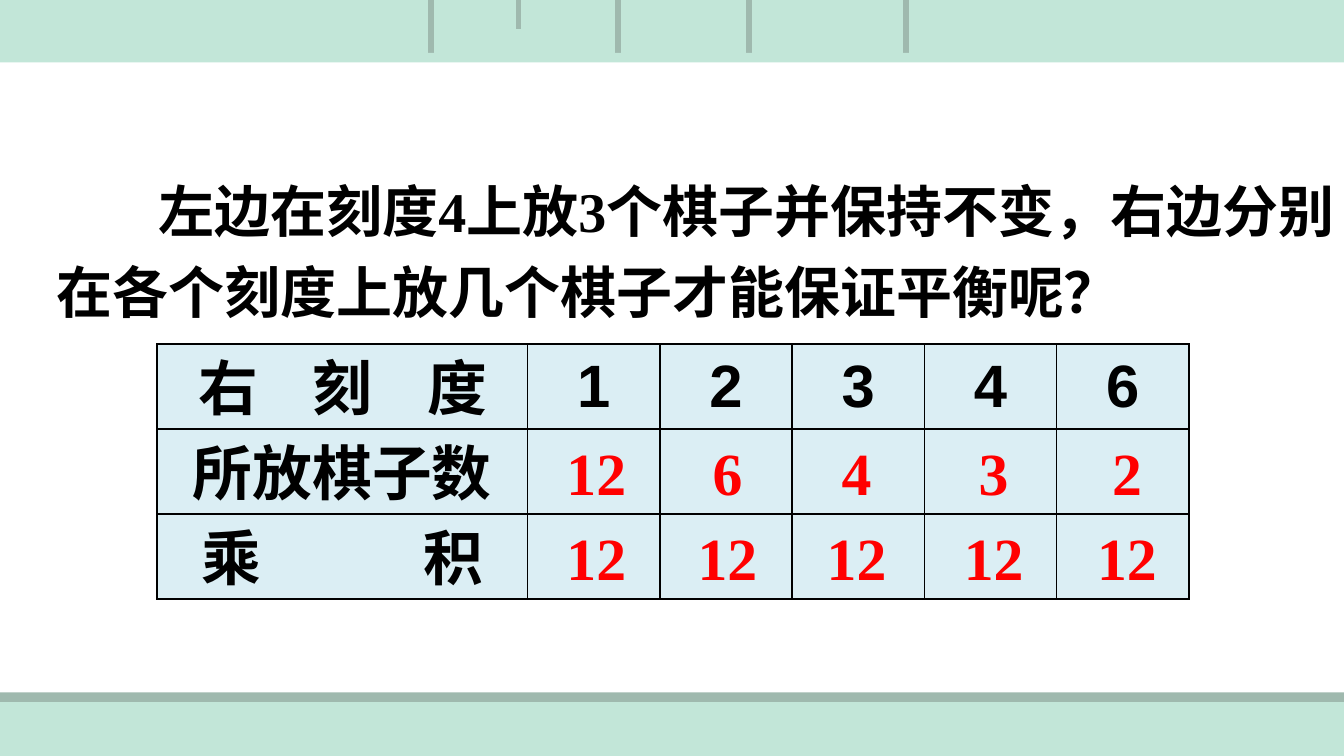
import lxml.etree
import pptx
import pptx.dml.color
import pptx.enum.shapes
import pptx.enum.text
import pptx.oxml.ns
import pptx.util

Cm = pptx.util.Cm
Pt = pptx.util.Pt
RGBColor = pptx.dml.color.RGBColor
PP_ALIGN = pptx.enum.text.PP_ALIGN
MSO_ANCHOR = pptx.enum.text.MSO_ANCHOR
qn = pptx.oxml.ns.qn

MINT = RGBColor(0xC2, 0xE6, 0xD8)
SAGE = RGBColor(0x9F, 0xB9, 0xAE)
WHITE = RGBColor(0xFF, 0xFF, 0xFF)
BLACK = RGBColor(0x00, 0x00, 0x00)
RED = RGBColor(0xFF, 0x00, 0x00)
PALE_BLUE = RGBColor(0xDB, 0xEE, 0xF4)

QUESTION_FORMAT = {"size": Pt(30), "name": "Times New Roman", "bold": True}
CELL_FORMAT = {"size": Pt(32), "name": "Arial", "bold": True}
ANSWER_FORMAT = {"size": Pt(32), "name": "Times New Roman", "bold": True}

ROW_LABELS = ["右\t刻\t度", "所放棋子数", "乘\t积"]
LABEL_TABS = {0: (0.78, [2.16, 4.32]), 2: (0.84, [4.2])}
SCALE_MARKS = [1, 2, 3, 4, 6]
ANSWER_CENTRES = [8.3, 10.78, 13.22, 15.81, 18.33]
PRODUCT = 12


def write_text(para, text, values, colour):
    span = para.add_run()
    span.text = text
    for name, value in values.items():
        setattr(span.font, name, value)
    span.font.color.rgb = colour


def add_band(page, box, colour):
    band = page.shapes.add_shape(
        pptx.enum.shapes.MSO_SHAPE.RECTANGLE, *[Cm(length) for length in box])
    band.shadow.inherit = False
    band.fill.solid()
    band.fill.fore_color.rgb = colour
    band.line.fill.background()


def add_backdrop(page, box):
    left, top, width, height = box
    add_band(page, box, MINT)
    for x, length in [(11.68, 1.02), (9.8, 0.55), (14.15, 1.02), (8.15, 1.02), (17.12, 1.02)]:
        stripe = page.shapes.add_connector(
            pptx.enum.shapes.MSO_CONNECTOR.STRAIGHT,
            Cm(left + x), Cm(top), Cm(left + x), Cm(top + length))
        stripe.line.color.rgb = SAGE
        stripe.line.width = Pt(3)
        lxml.etree.SubElement(stripe._element.spPr, qn("a:effectLst"))
    add_band(page, (left, top + 1.04, width, 12.22), WHITE)
    add_band(page, (left, top + 1.0, width, 0.18), MINT)
    add_band(page, (left, top + 13.08, width, 0.18), SAGE)


def add_question(page, box):
    title = page.shapes.title
    page.shapes._spTree.append(title._element)
    title.left, title.top, title.width, title.height = [Cm(length) for length in box]
    frame = title.text_frame
    frame.word_wrap = True
    frame.auto_size = pptx.enum.text.MSO_AUTO_SIZE.NONE
    frame.vertical_anchor = MSO_ANCHOR.TOP
    para = frame.paragraphs[0]
    para.alignment = PP_ALIGN.LEFT
    para.line_spacing = 1.2
    para._p.get_or_add_pPr().set("indent", str(Cm(1.93)))
    write_text(para, "左边在刻度4上放3个棋子并保持不变，右边分别在各个刻度上放几个棋子才能保证平衡呢？",
               QUESTION_FORMAT, BLACK)


def style_cell(cell):
    properties = cell._tc.get_or_add_tcPr()
    for side in ("lnL", "lnR", "lnT", "lnB"):
        border = lxml.etree.SubElement(properties, qn("a:" + side), w=str(Pt(1)))
        fill = lxml.etree.SubElement(border, qn("a:solidFill"))
        lxml.etree.SubElement(fill, qn("a:srgbClr"), val=str(BLACK))
    cell.fill.solid()
    cell.fill.fore_color.rgb = PALE_BLUE
    cell.vertical_anchor = MSO_ANCHOR.MIDDLE
    para = cell.text_frame.paragraphs[0]
    para.alignment = PP_ALIGN.CENTER
    return para


def set_label_tabs(cell, para, margin, stops):
    cell.margin_left = Cm(margin)
    cell.margin_right = 0
    para.alignment = PP_ALIGN.LEFT
    tab_list = lxml.etree.SubElement(para._p.get_or_add_pPr(), qn("a:tabLst"))
    for stop in stops:
        lxml.etree.SubElement(tab_list, qn("a:tab"), pos=str(Cm(stop)), algn="l")


def write_label(cell, para, row_index):
    cell.margin_top = cell.margin_bottom = 0
    para.line_spacing = 0.9
    if row_index in LABEL_TABS:
        set_label_tabs(cell, para, *LABEL_TABS[row_index])
    write_text(para, ROW_LABELS[row_index], CELL_FORMAT, BLACK)


def add_balance_table(page, box):
    left, top, width, height = box
    table = page.shapes.add_table(
        len(ROW_LABELS), len(SCALE_MARKS) + 1, *[Cm(length) for length in box]).table
    label_width = 7.0
    for index, column in enumerate(table.columns):
        column.width = Cm((width - label_width) / len(SCALE_MARKS) if index else label_width)
    for row_index, row in enumerate(table.rows):
        row.height = Cm(height / len(ROW_LABELS))
        for column_index, cell in enumerate(row.cells):
            para = style_cell(cell)
            if column_index == 0:
                write_label(cell, para, row_index)
            elif row_index == 0:
                write_text(para, str(SCALE_MARKS[column_index - 1]), CELL_FORMAT, BLACK)


def add_answers(page, box):
    left, top, width, height = box
    row_height = height / len(ROW_LABELS)
    for mark, centre in zip(SCALE_MARKS, ANSWER_CENTRES):
        for row, number in enumerate([PRODUCT // mark, PRODUCT], start=1):
            box_width = 1.65 if number >= 10 else 1.09
            answer = page.shapes.add_textbox(
                Cm(left + centre - box_width / 2), Cm(top + row * row_height),
                Cm(box_width), Cm(1.62))
            answer.text_frame.word_wrap = False
            para = answer.text_frame.paragraphs[0]
            para.alignment = PP_ALIGN.CENTER
            write_text(para, str(number), ANSWER_FORMAT, RED)


def main():
    deck = pptx.Presentation()
    deck.slide_width, deck.slide_height = Cm(25.4), Cm(14.28)
    page = deck.slides.add_slide(deck.slide_layouts[5])
    table_box = (2.97, 6.5, 19.5, 4.82)
    add_backdrop(page, (0, 0, 25.4, 14.28))
    add_question(page, (0.81, 2.95, 24.77, 3.2))
    add_balance_table(page, table_box)
    add_answers(page, table_box)
    deck.save("out.pptx")


if __name__ == "__main__":
    main()
